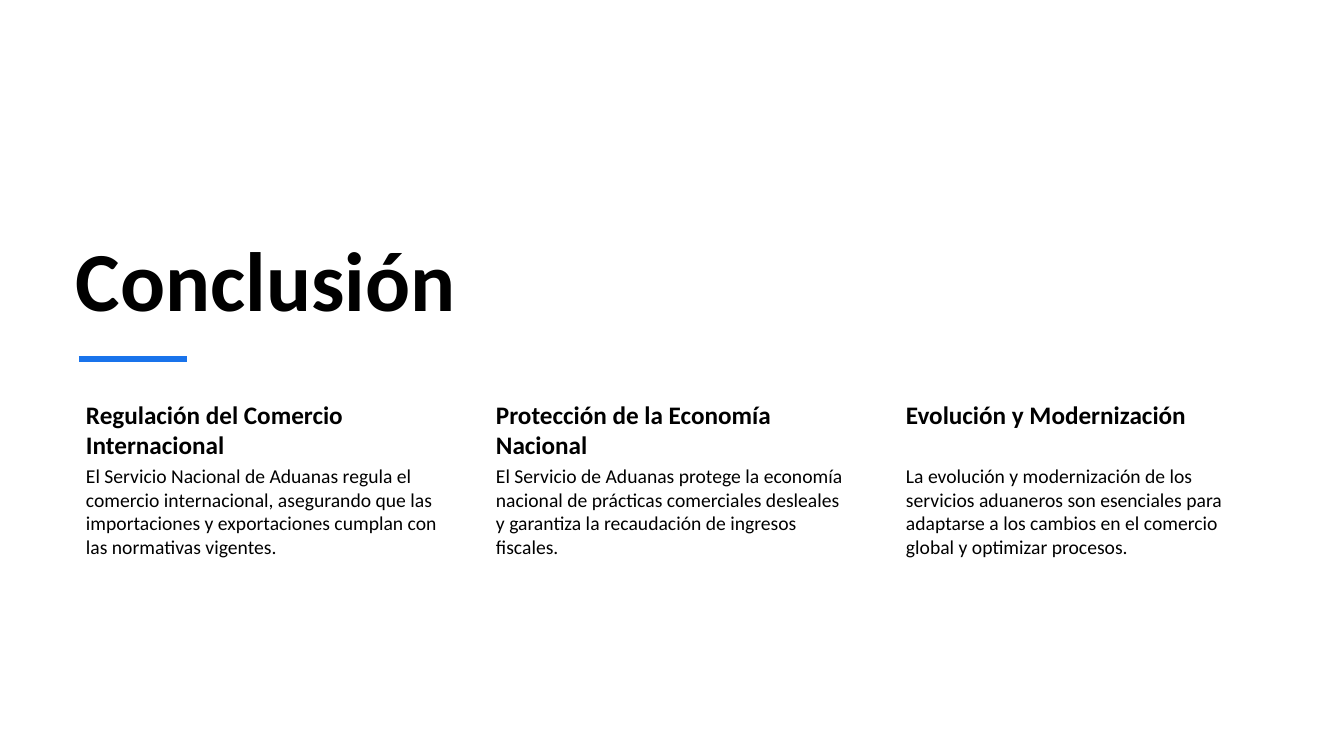
from pptx import Presentation
from pptx.dml.color import RGBColor
from pptx.enum.shapes import MSO_CONNECTOR
from pptx.enum.text import MSO_ANCHOR
from pptx.util import Pt
from lxml.etree import SubElement
from pptx.oxml.ns import qn

EMU_PER_PX = 914400 / 100.8
FONT = "Calibri"
BLACK = "000000"
BLUE = "1973EB"
COLUMN_LEFT, COLUMN_STEP, COLUMN_WIDTH = 71, 410, 372
HEADING_TOP, HEADING_HEIGHT = 396, 66
BODY_HEIGHT = 209
COLUMNS = [
    ("Regulación del Comercio Internacional",
     "El Servicio Nacional de Aduanas regula el comercio internacional, "
     "asegurando que las importaciones y exportaciones cumplan con las "
     "normativas vigentes."),
    ("Protección de la Economía Nacional",
     "El Servicio de Aduanas protege la economía nacional de prácticas "
     "comerciales desleales y garantiza la recaudación de ingresos fiscales."),
    ("Evolución y Modernización",
     "La evolución y modernización de los servicios aduaneros son esenciales "
     "para adaptarse a los cambios en el comercio global y optimizar procesos."),
]


def px(length):
    return round(length * EMU_PER_PX)


def color(value):
    return RGBColor.from_string(value)


def add_text(slide, box, text, size, bold=False, insets=(15, 3, 3, 3),
             anchor=MSO_ANCHOR.TOP):
    shape = slide.shapes.add_textbox(*map(px, box))
    frame = shape.text_frame
    frame.word_wrap = True
    frame.vertical_anchor = anchor
    frame.margin_left, frame.margin_top, frame.margin_right, frame.margin_bottom = map(px, insets)
    paragraph = frame.paragraphs[0]
    paragraph.text = text
    paragraph.font.name = FONT
    paragraph.font.size = Pt(size)
    paragraph.font.bold = bold
    paragraph.font.color.rgb = color(BLACK)


def add_rule(slide, left, right, top):
    rule = slide.shapes.add_connector(
        MSO_CONNECTOR.STRAIGHT, px(left), px(top), px(right), px(top))
    rule.line.color.rgb = color(BLUE)
    rule.line.width = Pt(4.5)
    SubElement(rule._element.spPr, qn("a:effectLst"))


def add_column(slide, index, heading, body):
    left = COLUMN_LEFT + index * COLUMN_STEP
    add_text(slide, (left, HEADING_TOP, COLUMN_WIDTH, HEADING_HEIGHT), heading, 18, bold=True)
    add_text(slide, (left, HEADING_TOP + HEADING_HEIGHT, COLUMN_WIDTH, BODY_HEIGHT),
             body, 14, insets=(15, 2, 2, 2))


def main():
    presentation = Presentation()
    presentation.slide_width = px(1344)
    presentation.slide_height = px(756)
    slide = presentation.slides.add_slide(presentation.slide_layouts[6])
    add_text(slide, (71, 173, 900, 155), "Conclusión", 60, bold=True,
             insets=(5, 0, 5, 0), anchor=MSO_ANCHOR.BOTTOM)
    add_rule(slide, 79, 187, 359)
    for index, (heading, body) in enumerate(COLUMNS):
        add_column(slide, index, heading, body)
    presentation.save("out.pptx")


if __name__ == "__main__":
    main()
